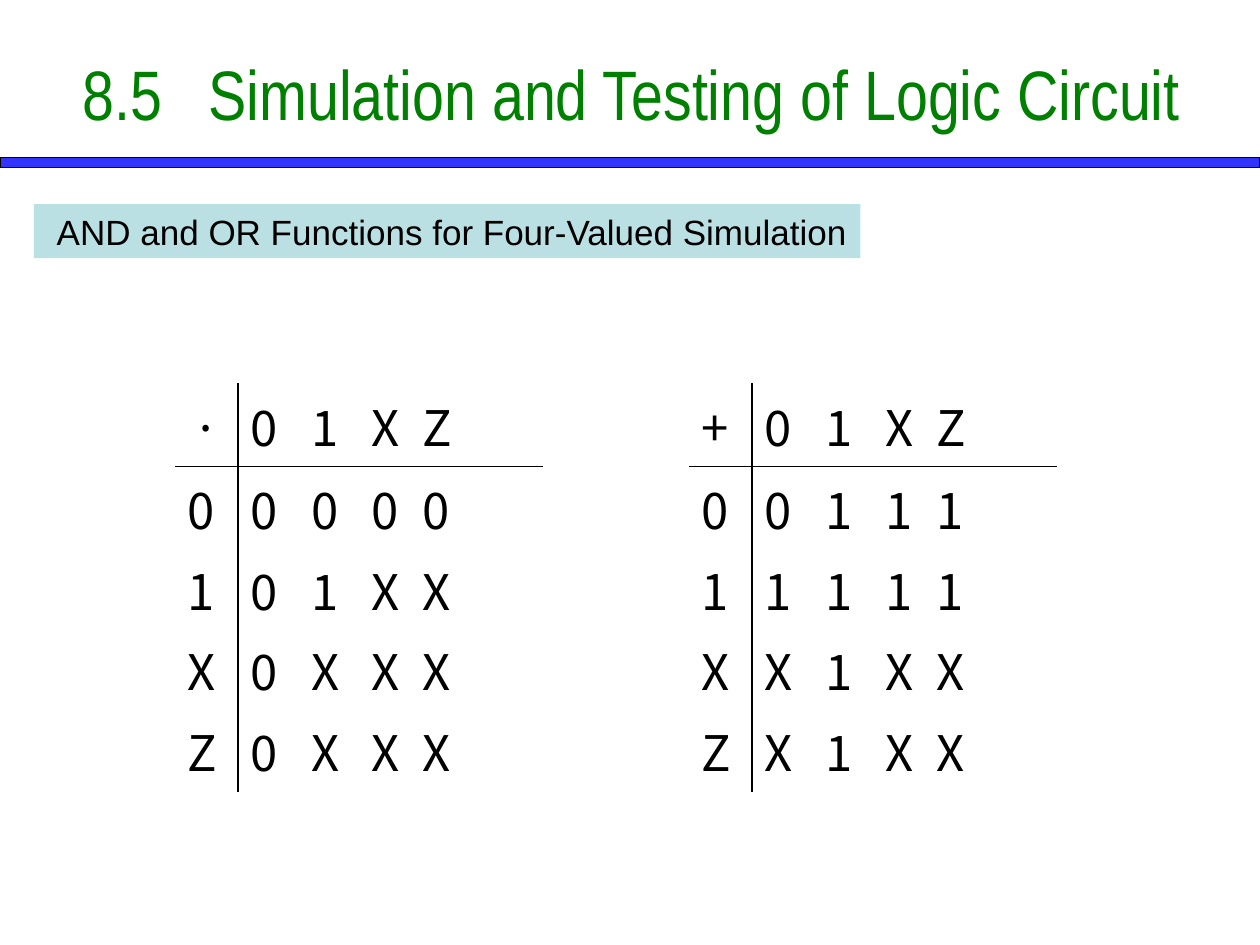
from lxml import etree
from pptx import Presentation
from pptx.dml.color import RGBColor
from pptx.enum.shapes import MSO_SHAPE as Shape
from pptx.enum.text import MSO_ANCHOR as Anchor, MSO_AUTO_SIZE as AutoSize, PP_ALIGN as Align
from pptx.oxml.ns import qn
from pptx.util import Inches, Pt

COLORS = {"black": "000000", "green": "008000", "blue": "3333FF", "pale": "BBE0E3"}
PLAIN_TABLE = "{2D5ABB26-0587-4C30-8999-92F81FD0307C}"
COLUMN_STOPS = [0.48, 0.96, 1.36]
BORDERS = {(0, 0): ["lnR", "lnB"], (0, 1): ["lnL", "lnB"],
           (1, 0): ["lnR", "lnT"], (1, 1): ["lnL", "lnT"]}
TRUTH_TABLES = [
    (1.39, "·", Align.CENTER, ["0000", "01XX", "0XXX", "0XXX"]),
    (5.47, "+", Align.LEFT, ["0111", "1111", "X1XX", "X1XX"]),
]


def write(paragraph, text, size, face, color):
    run = paragraph.add_run()
    run.text = text
    run.font.color.rgb = RGBColor.from_string(COLORS[color])
    for name, value in {"size": Pt(size), "name": face}.items():
        setattr(run.font, name, value)
    return run


def fill_cell(cell, lines, align, borders):
    """Write tabbed lines into a truth table cell and rule the given sides."""
    frame = cell.text_frame
    for i, line in enumerate(lines):
        paragraph = frame.add_paragraph() if i else frame.paragraphs[0]
        paragraph.alignment = align
        if i:
            paragraph.space_before = Pt(5.6)
        if len(line) > 1:
            stops = etree.SubElement(paragraph._p.get_or_add_pPr(), qn("a:tabLst"))
            for stop in COLUMN_STOPS:
                etree.SubElement(stops, qn("a:tab"), pos=str(Inches(stop)), algn="l")
        run = write(paragraph, "\t".join(line), 28, "Noto Sans CJK KR", "black")
        etree.SubElement(run.font._element, qn("a:ea"), typeface="Noto Sans CJK KR")
    properties = cell._tc.get_or_add_tcPr()
    for side in borders:
        rule = etree.SubElement(properties, qn(f"a:{side}"), w=str(Pt(1)))
        solid = etree.SubElement(rule, qn("a:solidFill"))
        etree.SubElement(solid, qn("a:srgbClr"), val=COLORS["black"])
    cell.fill.background()


deck = Presentation()
deck.slide_width, deck.slide_height = Inches(10), Inches(7.5)
slide = deck.slides.add_slide(deck.slide_layouts[6])
shapes = slide.shapes

divider = shapes.add_shape(Shape.RECTANGLE, Inches(0), Inches(1.25), Inches(10), Inches(0.08))
divider.shadow.inherit = False
divider.fill.solid()
divider.fill.fore_color.rgb = RGBColor.from_string(COLORS["blue"])
divider.line.color.rgb = RGBColor.from_string(COLORS["black"])
divider.line.width = Pt(0.75)

for left, operator, operator_align, results in TRUTH_TABLES:
    truth = shapes.add_table(2, 2, Inches(left), Inches(3.04), Inches(2.92), Inches(2.96)).table
    truth.first_row = truth.horz_banding = False
    truth._tbl.tblPr.find(qn("a:tableStyleId")).text = PLAIN_TABLE
    for column, width in zip(truth.columns, [0.5, 2.42]):
        column.width = Inches(width)
    for row, height in zip(truth.rows, [0.57, 2.39]):
        row.height = Inches(height)
    contents = {(0, 0): [operator], (0, 1): ["01XZ"], (1, 0): list("01XZ"), (1, 1): results}
    for place, lines in contents.items():
        align = operator_align if place == (0, 0) else Align.LEFT
        fill_cell(truth.cell(*place), lines, align, BORDERS[place])

subtitle = shapes.add_textbox(Inches(0.27), Inches(1.62), Inches(6.56), Inches(0.43))
subtitle.fill.solid()
subtitle.fill.fore_color.rgb = RGBColor.from_string(COLORS["pale"])
for name, value in {"word_wrap": False, "auto_size": AutoSize.SHAPE_TO_FIT_TEXT,
                    "margin_left": Inches(0.18)}.items():
    setattr(subtitle.text_frame, name, value)
write(subtitle.text_frame.paragraphs[0], "AND and OR Functions for Four-Valued Simulation",
      20, "Arial", "black")

title = shapes.add_textbox(Inches(0.51), Inches(0.21), Inches(9), Inches(1.05))
for name, value in {"word_wrap": True, "vertical_anchor": Anchor.MIDDLE}.items():
    setattr(title.text_frame, name, value)
heading = title.text_frame.paragraphs[0]
heading.alignment = Align.CENTER
write(heading, "8.5\tSimulation and Testing of Logic Circuit", 40, "Arial Narrow", "green")

deck.save("out.pptx")
